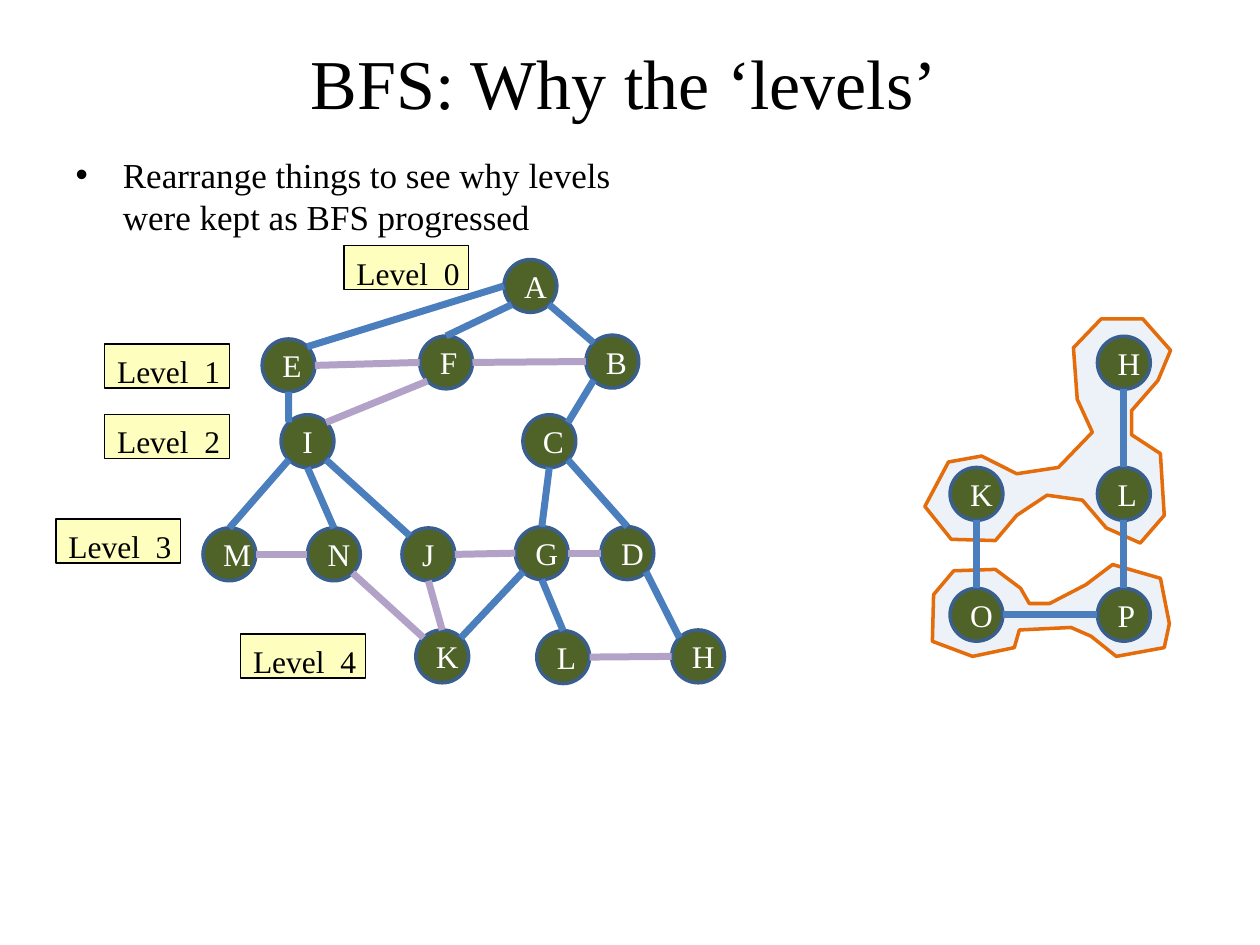
import pptx
import pptx.util
import pptx.dml.color
import pptx.enum.shapes
import pptx.enum.text
import pptx.oxml
import pptx.oxml.ns
import lxml.etree

Pt = pptx.util.Pt
RGBColor = pptx.dml.color.RGBColor
SHAPES = pptx.enum.shapes.MSO_SHAPE
ALIGN = pptx.enum.text.PP_ALIGN
ANCHOR = pptx.enum.text.MSO_ANCHOR
qn = pptx.oxml.ns.qn

BLACK = RGBColor(0x00, 0x00, 0x00)
WHITE = RGBColor(0xFF, 0xFF, 0xFF)
NODE_GREEN = RGBColor(0x4F, 0x62, 0x28)
NODE_RIM = RGBColor(0x3A, 0x5F, 0x8C)
TREE_BLUE = RGBColor(0x4B, 0x7E, 0xBC)
CROSS_PURPLE = RGBColor(0xB3, 0xA2, 0xC7)
LABEL_YELLOW = RGBColor(0xFE, 0xFE, 0xBE)
REGION_BLUE = RGBColor(0x4F, 0x81, 0xBD)
REGION_ORANGE = RGBColor(0xE4, 0x6C, 0x0A)

FONT = "Times New Roman"
NODE = 30.2  # node diameter
DIAGONAL = 0.707

# Node positions (left, top), relative to the box of each graph
TREE_NODES = {
    "A": (256, 8.3), "B": (302.8, 51.5), "C": (266.8, 97), "D": (311.4, 161),
    "E": (117.8, 53.7), "F": (207.8, 52), "G": (262.5, 161), "I": (128.6, 97),
    "J": (197.7, 161.7), "M": (84, 161.7), "N": (143.7, 161.7),
    "H": (351.8, 220), "K": (205.6, 220), "L": (274.7, 220.4),
}
REST_NODES = {
    "H": (99.1, 10.2), "K": (14.9, 85.1), "L": (99.1, 85.1),
    "O": (14.9, 154.2), "P": (99.1, 154.2),
}

# Edges: node and compass side at each end
TREE_EDGES = [
    "A w E ne", "A sw F n", "A se B nw", "I nw E s", "B sw C ne", "I sw M n",
    "I s N n", "I se J nw", "C s G n", "C se D n", "K ne G sw", "L n G s", "H nw D se",
]
CROSS_EDGES = [
    "F w E e", "F e B w", "I ne F sw", "M e N w", "J e G w", "D w G e",
    "J s K n", "N se K nw", "L e H w",
]
REST_EDGES = ["L n H s", "O n K s", "P n L s", "P w O e"]

LEVEL_POSITIONS = [(164.6, 0.4), (27.8, 56.6), (27.8, 96.9), (0, 156.6), (105.5, 222.2)]

# Outlines around the nodes not yet rearranged
UPPER_REGION = [
    (14, 82), (0.5, 107.4), (15.6, 126.2), (40.8, 126.9), (53, 112.5), (70.3, 101),
    (90.5, 103.8), (104.2, 119.7), (123.6, 128.3), (137.3, 112.5), (135.1, 77.2),
    (118.6, 66.4), (118.6, 52.7), (133.7, 35.4), (140.9, 18.2), (125, 0.2),
    (101.3, 0.2), (85.4, 16.7), (87.6, 46.2), (96.2, 65), (76.8, 85.1),
    (53, 88.7), (32.9, 78.6),
]
LOWER_REGION = [
    (55.2, 154.2), (40.8, 143.4), (17, 144.2), (5.5, 157.8), (4.8, 184.5),
    (27.8, 193.1), (51.6, 188.1), (54.5, 178), (84, 176.6), (95.5, 181.6),
    (109.9, 193.1), (137.3, 188.1), (140.2, 174.4), (135.1, 148.5),
    (107.8, 140.6), (92.6, 152.1), (71.8, 162.9), (60.2, 162.9),
]


def style_text(frame, size, color, align):
    paragraph = frame.paragraphs[0]
    paragraph.alignment = align
    font = paragraph.runs[0].font
    font.name, font.size, font.color.rgb = FONT, Pt(size), color


def style_shape(shape, fill, line, width):
    shape.shadow.inherit = False
    shape.fill.solid()
    shape.fill.fore_color.rgb = fill
    shape.line.color.rgb = line
    shape.line.width = Pt(width)


def fill_placeholder(placeholder, box, text, size, align):
    placeholder.left, placeholder.top, placeholder.width, placeholder.height = map(Pt, box)
    frame = placeholder.text_frame
    frame.text = text
    frame.auto_size = pptx.enum.text.MSO_AUTO_SIZE.NONE
    style_text(frame, size, BLACK, align)
    return frame.paragraphs[0]


def add_heading(slide, box):
    fill_placeholder(slide.shapes.title, box, "BFS: Why the ‘levels’ ", 40, ALIGN.CENTER)
    slide.shapes.title.text_frame.vertical_anchor = ANCHOR.MIDDLE


def add_explanation(slide, box):
    point = fill_placeholder(
        slide.placeholders[1], box,
        "Rearrange things to see why levels were kept as BFS progressed", 20, ALIGN.LEFT)
    properties = point._p.get_or_add_pPr()
    properties.set("marL", str(Pt(27)))
    properties.set("indent", str(Pt(-27)))
    lxml.etree.SubElement(properties, qn("a:buChar")).set("char", "•")


def add_region(slide, box, outline):
    points = [(Pt(box[0] + x), Pt(box[1] + y)) for x, y in outline]
    builder = slide.shapes.build_freeform(*points[0], scale=1.0)
    builder.add_line_segments(points[1:], close=True)
    region = builder.convert_to_shape()
    style_shape(region, REGION_BLUE, REGION_ORANGE, 2)
    color = region._element.spPr.find(qn("a:solidFill"))[0]
    lxml.etree.SubElement(color, qn("a:alpha")).set("val", "10000")


def add_nodes(slide, box, nodes):
    for letter, (x, y) in nodes.items():
        node = slide.shapes.add_shape(
            SHAPES.OVAL, Pt(box[0] + x), Pt(box[1] + y), Pt(NODE), Pt(NODE))
        style_shape(node, NODE_GREEN, NODE_RIM, 2)
        node.text_frame.text = letter
        node.text_frame.vertical_anchor = ANCHOR.MIDDLE
        style_text(node.text_frame, 18, WHITE, ALIGN.CENTER)


def rim_point(box, corner, side):
    """Point on a node's rim in the given compass direction."""
    reach = NODE / 2 * (DIAGONAL if len(side) == 2 else 1)
    dx = ("e" in side) - ("w" in side)
    dy = ("s" in side) - ("n" in side)
    return (Pt(box[0] + corner[0] + NODE / 2 + dx * reach),
            Pt(box[1] + corner[1] + NODE / 2 + dy * reach))


def add_edges(slide, box, nodes, edges, color):
    for edge in edges:
        start, start_side, end, end_side = edge.split()
        connector = slide.shapes.add_connector(
            pptx.enum.shapes.MSO_CONNECTOR.STRAIGHT,
            *rim_point(box, nodes[start], start_side),
            *rim_point(box, nodes[end], end_side))
        connector.line.color.rgb = color
        connector.line.width = Pt(4)
        lxml.etree.SubElement(connector._element.spPr, qn("a:effectLst"))


def add_level_labels(slide, box):
    for level, (x, y) in enumerate(LEVEL_POSITIONS):
        label = slide.shapes.add_shape(
            SHAPES.RECTANGLE, Pt(box[0] + x), Pt(box[1] + y), Pt(71.3), Pt(25.2))
        style_shape(label, LABEL_YELLOW, BLACK, 0.75)
        frame = label.text_frame
        frame.text = f"Level  {level}"
        frame.word_wrap = False
        frame.vertical_anchor = ANCHOR.TOP
        frame.margin_top, frame.margin_bottom = Pt(4.5), 0
        style_text(frame, 18, BLACK, ALIGN.LEFT)


def add_remaining_graph(slide, box):
    for outline in (UPPER_REGION, LOWER_REGION):
        add_region(slide, box, outline)
    add_nodes(slide, box, REST_NODES)
    add_edges(slide, box, REST_NODES, REST_EDGES, TREE_BLUE)


def add_level_tree(slide, box):
    add_nodes(slide, box, TREE_NODES)
    add_edges(slide, box, TREE_NODES, TREE_EDGES, TREE_BLUE)
    add_edges(slide, box, TREE_NODES, CROSS_EDGES, CROSS_PURPLE)
    add_level_labels(slide, box)


def main():
    deck = pptx.Presentation()
    deck.slide_width, deck.slide_height = Pt(720), Pt(540)
    slide = deck.slides.add_slide(deck.slide_layouts[1])
    add_heading(slide, (36, 21.6, 648, 50.4))
    add_explanation(slide, (36, 84, 324, 54))
    add_remaining_graph(slide, (528, 182))
    add_level_tree(slide, (32, 140))
    deck.save("out.pptx")


if __name__ == "__main__":
    main()
